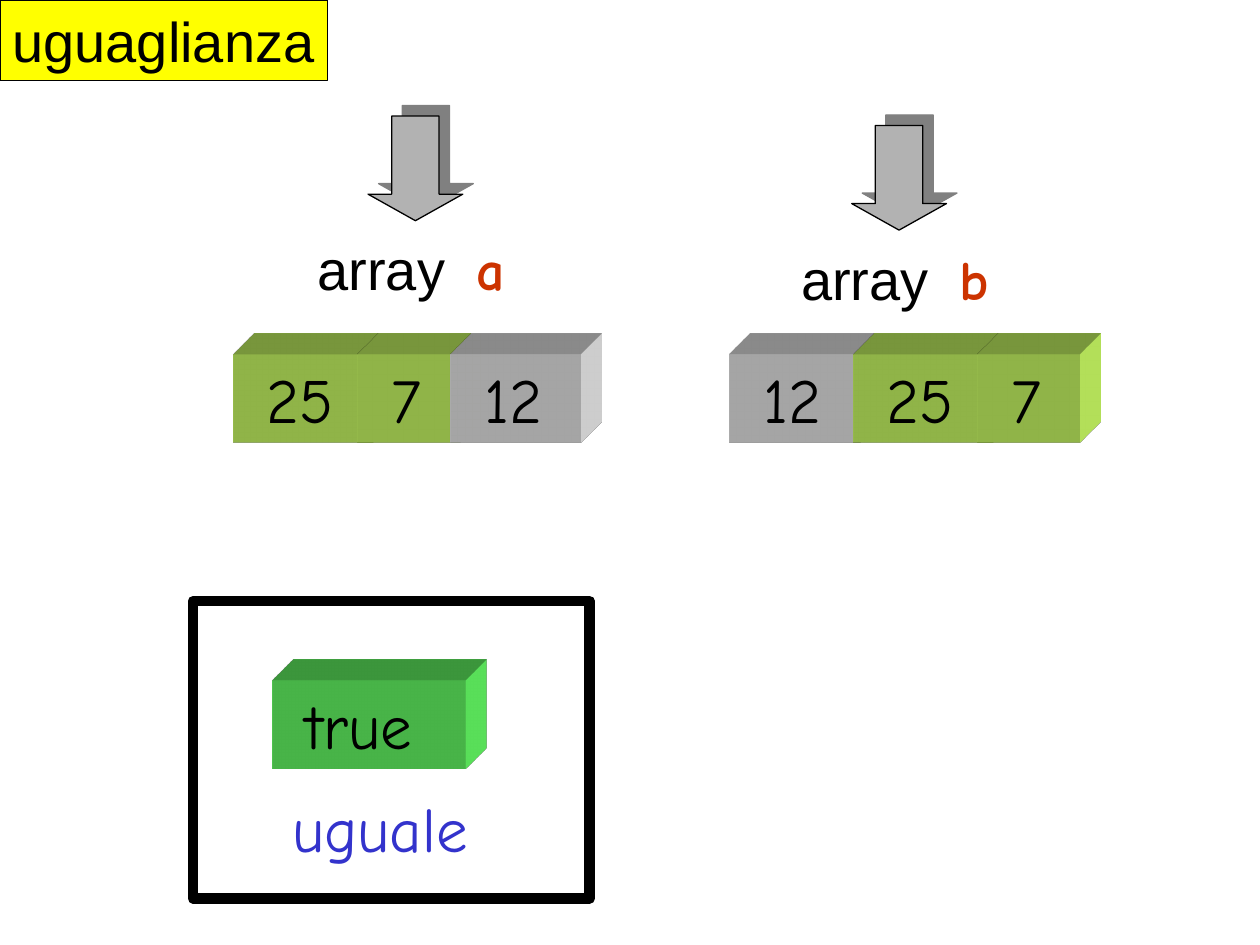
import pptx
import pptx.util
import pptx.dml.color
import pptx.enum.shapes
import pptx.enum.text
import pptx.oxml
from pptx.util import Cm

NS = 'xmlns:a="http://schemas.openxmlformats.org/drawingml/2006/main"'
SHADOW = f"""<a:effectLst {NS}>
<a:outerShdw dist="107950" dir="18900000" algn="ctr" rotWithShape="0">
<a:srgbClr val="808080"/></a:outerShdw></a:effectLst>"""
SCENE = f"""<a:scene3d {NS}><a:camera prst="legacyObliqueTopRight"/>
<a:lightRig rig="legacyFlat3" dir="b"/></a:scene3d>"""
DEPTH = """<a:sp3d {} extrusionH="430200" prstMaterial="legacyMatte">
<a:bevelT w="13500" h="13500" prst="angle"/><a:bevelB w="13500" h="13500" prst="angle"/>
<a:extrusionClr><a:srgbClr val="{}"/></a:extrusionClr></a:sp3d>"""
KINDS = pptx.enum.shapes.MSO_SHAPE
HAND = "Comic Neue"


def color(code):
    return pptx.dml.color.RGBColor.from_string(code)


def block(shapes, kind, box, fill=None, line=None, width=0.75, text="", size=36, face=HAND, ink="000000"):
    item = shapes.add_shape(kind, *[Cm(n) for n in box])
    item.shadow.inherit = False
    if fill:
        item.fill.solid()
        item.fill.fore_color.rgb = color(fill)
    else:
        item.fill.background()
    if line:
        item.line.color.rgb = color(line)
        item.line.width = pptx.util.Pt(width)
    else:
        item.line.fill.background()
    if text:
        frame = item.text_frame
        frame.word_wrap = True
        frame.vertical_anchor = pptx.enum.text.MSO_ANCHOR.TOP
        para = frame.paragraphs[0]
        para.alignment = pptx.enum.text.PP_ALIGN.LEFT
        para.add_run().text = text
        para.font.size = pptx.util.Pt(size)
        para.font.name = face
        para.font.color.rgb = color(ink)
    return item


deck = pptx.Presentation()
deck.slide_width = Cm(25.4)
deck.slide_height = Cm(19.05)
slide = deck.slides.add_slide(deck.slide_layouts[6])

block(slide.shapes, KINDS.RECTANGLE, (0, 0, 6.6, 1.63), "FFFF00", "000000",
      text="uguaglianza", size=32, face="Arial")

arrays = slide.shapes.add_group_shape().shapes
for name, left, top in [("a", 6.15, 2.34), ("b", 15.9, 2.53)]:
    arrow = block(arrays, KINDS.DOWN_ARROW, (left + 1.27, top, 1.91, 2.11), "B2B2B2", "000000")
    arrow.adjustments[0] = 0.5
    arrow.adjustments[1] = 0.28
    props = arrow._element.spPr
    props.replace(props.effectLst, pptx.oxml.parse_xml(SHADOW))
    label = block(arrays, KINDS.RECTANGLE, (left, top + 2.27, 4.35, 1.6),
                  text="array  ", size=32, face="Arial")
    run = label.text_frame.paragraphs[0].add_run()
    run.text = name
    run.font.name = HAND
    run.font.bold = True
    run.font.color.rgb = color("CC3300")

answer = slide.shapes.add_group_shape().shapes
cubes = [
    (arrays, " 25", 4.7, 7.14, 2.82, "CCFF66"),
    (arrays, " 7", 7.21, 7.14, 2.06, "CCFF66"),
    (arrays, " 12", 9.09, 7.14, 2.62, "EAEAEA"),
    (arrays, " 12", 14.71, 7.14, 2.62, "EAEAEA"),
    (arrays, " 25", 17.2, 7.14, 2.82, "CCFF66"),
    (arrays, " 7", 19.71, 7.14, 2.06, "CCFF66"),
    (answer, " true", 5.49, 13.72, 3.89, "66FF66"),
]
for group, text, left, top, width, fill in cubes:
    cube = block(group, KINDS.RECTANGLE, (left, top, width, 1.78), fill, text=text)
    props = cube._element.spPr
    props.append(pptx.oxml.parse_xml(SCENE))
    props.append(pptx.oxml.parse_xml(DEPTH.format(NS, fill)))

block(answer, KINDS.RECTANGLE, (5.64, 15.8, 4.19, 1.78), text="uguale", ink="3333CC")
block(slide.shapes, KINDS.RECTANGLE, (3.89, 12.12, 8, 5.99), line="000000", width=6)

deck.save("out.pptx")
